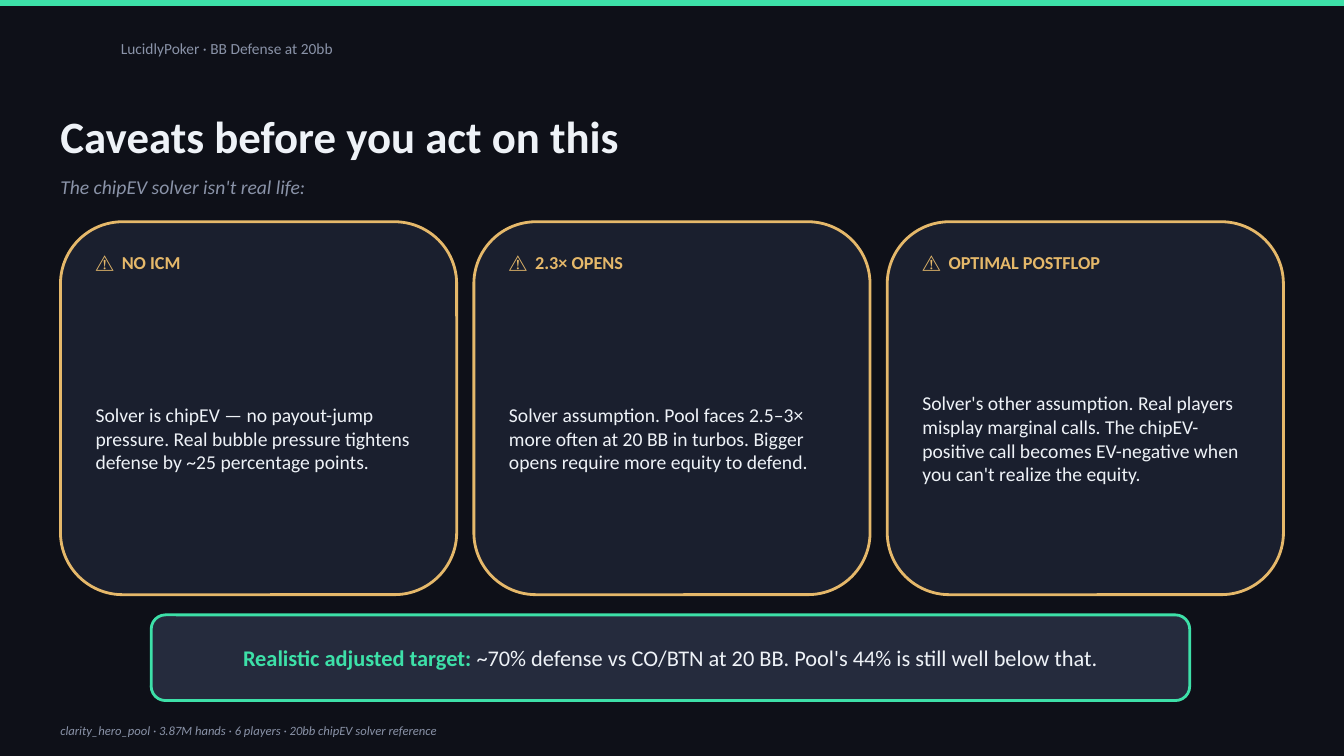
from lxml import etree
from pptx import Presentation
from pptx.dml.color import RGBColor
from pptx.enum.shapes import MSO_SHAPE
from pptx.enum.text import MSO_ANCHOR, MSO_AUTO_SIZE, PP_ALIGN
from pptx.oxml.ns import qn
from pptx.util import Emu, Pt

RECT = MSO_SHAPE.RECTANGLE
ROUNDED = MSO_SHAPE.ROUNDED_RECTANGLE
MIDDLE = MSO_ANCHOR.MIDDLE
NO_FIT = MSO_AUTO_SIZE.NONE
LEFT, CENTER = PP_ALIGN.LEFT, PP_ALIGN.CENTER

PX = 9144
TITLE_ONLY = 5
COLORS = {
    "background": "0E1018",
    "card": "1A1F2E",
    "panel": "252B3D",
    "mint": "3DE0A8",
    "amber": "E5B86A",
    "light": "EEF2F7",
    "muted": "8A93A8",
}
CAVEATS = [
    ("NO ICM",
     "Solver is chipEV — no payout-jump pressure. Real bubble pressure "
     "tightens defense by ~25 percentage points."),
    ("2.3× OPENS",
     "Solver assumption. Pool faces 2.5–3× more often at 20 BB in turbos. "
     "Bigger opens require more equity to defend."),
    ("OPTIMAL POSTFLOP",
     "Solver's other assumption. Real players misplay marginal calls. "
     "The chipEV-positive call becomes EV-negative when you can't realize "
     "the equity."),
]
CARD_LEFT, CARD_TOP, CARD_WIDTH, CARD_HEIGHT = 60, 220, 393, 370
CARD_STEP = 410


def color(name):
    return RGBColor.from_string(COLORS[name])


def scaled(box):
    return [Emu(length * PX) for length in box]


class SlideBuilder:
    font = "Calibri"

    def __init__(self, slide):
        self.slide = slide
        background = slide.background.fill
        background.solid()
        background.fore_color.rgb = color("background")

    def panel(self, box, fill, outline=None, preset=ROUNDED):
        panel = self.slide.shapes.add_shape(preset, *scaled(box))
        panel.shadow.inherit = False
        panel.fill.solid()
        panel.fill.fore_color.rgb = color(fill)
        if outline:
            panel.line.color.rgb = color(outline)
            panel.line.width = Pt(2)
        else:
            panel.line.fill.background()

    def add_runs(self, frame, runs, size, align=LEFT, italic=False, tab=None):
        frame.word_wrap = True
        frame.auto_size = NO_FIT
        frame.vertical_anchor = MIDDLE
        paragraph = frame.paragraphs[0]
        paragraph.alignment = align
        if tab:
            stops = etree.SubElement(paragraph._p.get_or_add_pPr(), qn("a:tabLst"))
            etree.SubElement(stops, qn("a:tab"), pos=str(tab * PX), algn="l")
        for words, tint, bold in runs:
            run = paragraph.add_run()
            run.text = words
            run.font.name = self.font
            run.font.size = Pt(size)
            run.font.bold = bold
            run.font.italic = italic
            run.font.color.rgb = color(tint)

    def title(self, box, words):
        heading = self.slide.shapes.title
        heading.left, heading.top, heading.width, heading.height = scaled(box)
        self.add_runs(heading.text_frame, [(words, "light", True)], 32)

    def text(self, box, runs, size, **style):
        frame = self.slide.shapes.add_textbox(*scaled(box)).text_frame
        self.add_runs(frame, runs, size, **style)

    def caveat(self, left, label, explanation):
        self.panel((left, CARD_TOP, CARD_WIDTH, CARD_HEIGHT), "card", "amber")
        self.text((left + 25, CARD_TOP + 20, 350, 40),
                  [("⚠\t" + label, "amber", True)], 13, tab=26)
        self.text((left + 25, CARD_TOP + 70, 350, 290),
                  [(explanation, "light", False)], 14)


def main():
    deck = Presentation()
    deck.slide_width, deck.slide_height = scaled((1333, 750))
    builder = SlideBuilder(deck.slides.add_slide(deck.slide_layouts[TITLE_ONLY]))

    builder.panel((0, 0, 1333, 6), "mint", preset=RECT)
    builder.text((110, 25, 800, 45),
                 [("LucidlyPoker · BB Defense at 20bb", "muted", False)], 11)
    builder.text((50, 705, 1230, 40),
                 [("clarity_hero_pool · 3.87M hands · 6 players · "
                   "20bb chipEV solver reference", "muted", False)],
                 9, italic=True)
    builder.title((50, 100, 1230, 70), "Caveats before you act on this")
    builder.text((50, 165, 1230, 40),
                 [("The chipEV solver isn't real life:", "muted", False)],
                 14, italic=True)

    for index, (label, explanation) in enumerate(CAVEATS):
        builder.caveat(CARD_LEFT + index * CARD_STEP, label, explanation)

    builder.panel((150, 610, 1030, 85), "panel", "mint")
    builder.text((170, 620, 990, 65),
                 [("Realistic adjusted target: ", "mint", True),
                  ("~70% defense vs CO/BTN at 20 BB. Pool's 44% is still "
                   "well below that.", "light", False)],
                 16, align=CENTER)
    deck.save("out.pptx")


if __name__ == "__main__":
    main()
